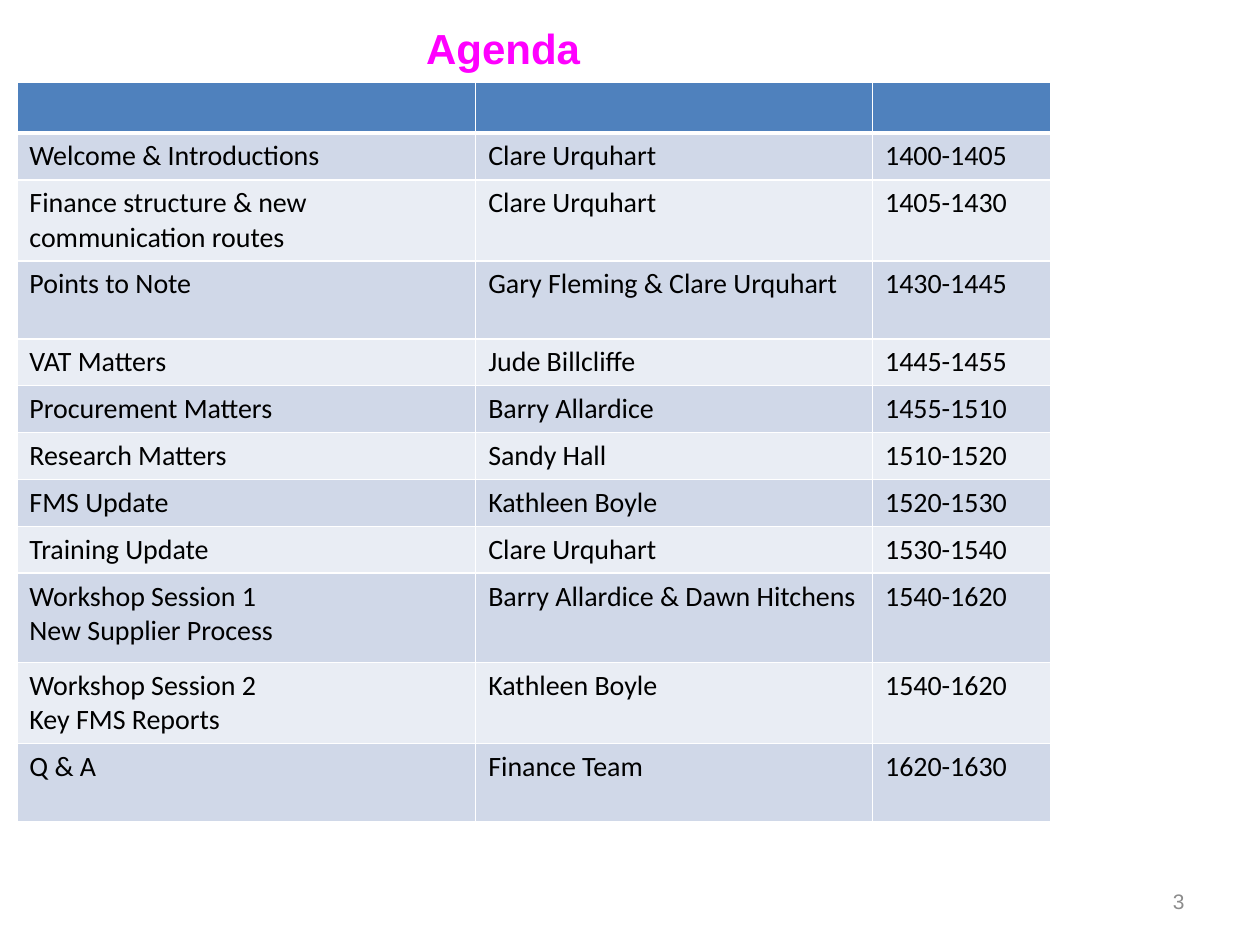
from dataclasses import dataclass
from typing import NamedTuple

from lxml import etree
from pptx import Presentation
from pptx.dml.color import RGBColor
from pptx.enum.text import MSO_ANCHOR, PP_ALIGN
from pptx.oxml.ns import qn
from pptx.util import Cm, Pt

LEFT, RIGHT = PP_ALIGN.LEFT, PP_ALIGN.RIGHT
MIDDLE, BOTTOM = MSO_ANCHOR.MIDDLE, MSO_ANCHOR.BOTTOM


@dataclass(frozen=True)
class Theme:
    heading_font: str = "Arial"
    body_font: str = "Calibri"
    title_size: int = 24
    body_size: int = 16
    number_size: int = 12
    title: str = "FF00FF"
    body: str = "000000"
    number: str = "8C8C8C"
    header: str = "4F81BD"
    bands: tuple[str, str] = ("D0D8E8", "E9EDF4")
    border: str = "FFFFFF"
    border_width: int = 1
    header_rule: int = 3


class Session(NamedTuple):
    topic: str
    speaker: str
    time: str
    height: float = 0.94


class Label(NamedTuple):
    text: str
    box: tuple[float, float, float, float]
    frame: dict
    align: PP_ALIGN
    font: dict
    color: str


THEME = Theme()
COLUMN_WIDTHS = (9.25, 8.0, 3.6)
HEADER_HEIGHT = 0.99
SESSIONS = (
    Session("Welcome & Introductions", "Clare Urquhart", "1400-1405"),
    Session("Finance structure & new communication routes", "Clare Urquhart", "1405-1430", 1.63),
    Session("Points to Note", "Gary Fleming & Clare Urquhart", "1430-1445", 1.57),
    Session("VAT Matters", "Jude Billcliffe", "1445-1455"),
    Session("Procurement Matters", "Barry Allardice", "1455-1510"),
    Session("Research Matters", "Sandy Hall", "1510-1520"),
    Session("FMS Update", "Kathleen Boyle", "1520-1530"),
    Session("Training Update", "Clare Urquhart", "1530-1540"),
    Session("Workshop Session 1\nNew Supplier Process", "Barry Allardice & Dawn Hitchens",
            "1540-1620", 1.8),
    Session("Workshop Session 2\nKey FMS Reports", "Kathleen Boyle", "1540-1620", 1.63),
    Session("Q & A", "Finance Team", "1620-1630", 1.57),
)
LABELS = (
    Label("3", (18.21, 17.65, 5.92, 1.02), {"vertical_anchor": MIDDLE}, RIGHT,
          {"name": THEME.heading_font, "size": Pt(THEME.number_size)}, THEME.number),
    Label("Agenda", (0.46, -0.25, 20.6, 1.93),
          {"vertical_anchor": BOTTOM, "margin_left": Cm(8.13), "margin_bottom": Cm(0.2)}, LEFT,
          {"name": THEME.heading_font, "size": Pt(THEME.title_size), "bold": True}, THEME.title),
)


def apply_format(target: object, values: dict) -> None:
    for attribute, value in values.items():
        setattr(target, attribute, value)


def style_font(font, values: dict, color: str) -> None:
    apply_format(font, values)
    font.color.rgb = RGBColor.from_string(color)


def add_border(cell, side: str, width: int) -> None:
    """Add one cell edge; sides must come in the order lnL, lnR, lnT, lnB, before the fill."""
    edge = etree.SubElement(cell._tc.get_or_add_tcPr(), qn(f"a:{side}"), w=str(Pt(width)))
    fill = etree.SubElement(edge, qn("a:solidFill"))
    etree.SubElement(fill, qn("a:srgbClr"), val=THEME.border)


def style_cell(cell, fill: str, borders: dict[str, int]) -> None:
    for side, width in borders.items():
        add_border(cell, side, width)
    cell.fill.solid()
    cell.fill.fore_color.rgb = RGBColor.from_string(fill)


def add_agenda(slide, sessions: tuple[Session, ...]) -> None:
    heights = (HEADER_HEIGHT, *(session.height for session in sessions))
    agenda = slide.shapes.add_table(
        len(heights), len(COLUMN_WIDTHS), Cm(0.34), Cm(1.65),
        Cm(sum(COLUMN_WIDTHS)), Cm(sum(heights))).table
    for column, width in zip(agenda.columns, COLUMN_WIDTHS):
        column.width = Cm(width)
    for row, height in zip(agenda.rows, heights):
        row.height = Cm(height)

    thin, rule = THEME.border_width, THEME.header_rule
    for cell in agenda.rows[0].cells:
        style_cell(cell, THEME.header, {"lnL": thin, "lnR": thin, "lnT": thin, "lnB": rule})
    body_font = {"name": THEME.body_font, "size": Pt(THEME.body_size)}
    for index, session in enumerate(sessions):
        details = (session.topic, session.speaker, session.time)
        for cell, detail in zip(agenda.rows[index + 1].cells, details):
            style_cell(cell, THEME.bands[index % 2], {"lnL": thin, "lnR": thin, "lnB": thin})
            cell.text = detail
            for paragraph in cell.text_frame.paragraphs:
                style_font(paragraph.runs[0].font, body_font, THEME.body)


def add_label(slide, label: Label) -> None:
    frame = slide.shapes.add_textbox(*map(Cm, label.box)).text_frame
    apply_format(frame, {"word_wrap": True, **label.frame})
    paragraph = frame.paragraphs[0]
    paragraph.alignment = label.align
    run = paragraph.add_run()
    run.text = label.text
    style_font(run.font, label.font, label.color)


def main() -> None:
    deck = Presentation()
    deck.slide_width, deck.slide_height = Cm(25.4), Cm(19.05)
    slide = deck.slides.add_slide(deck.slide_layouts[6])
    add_agenda(slide, SESSIONS)
    for label in LABELS:
        add_label(slide, label)
    deck.save("out.pptx")


if __name__ == "__main__":
    main()
